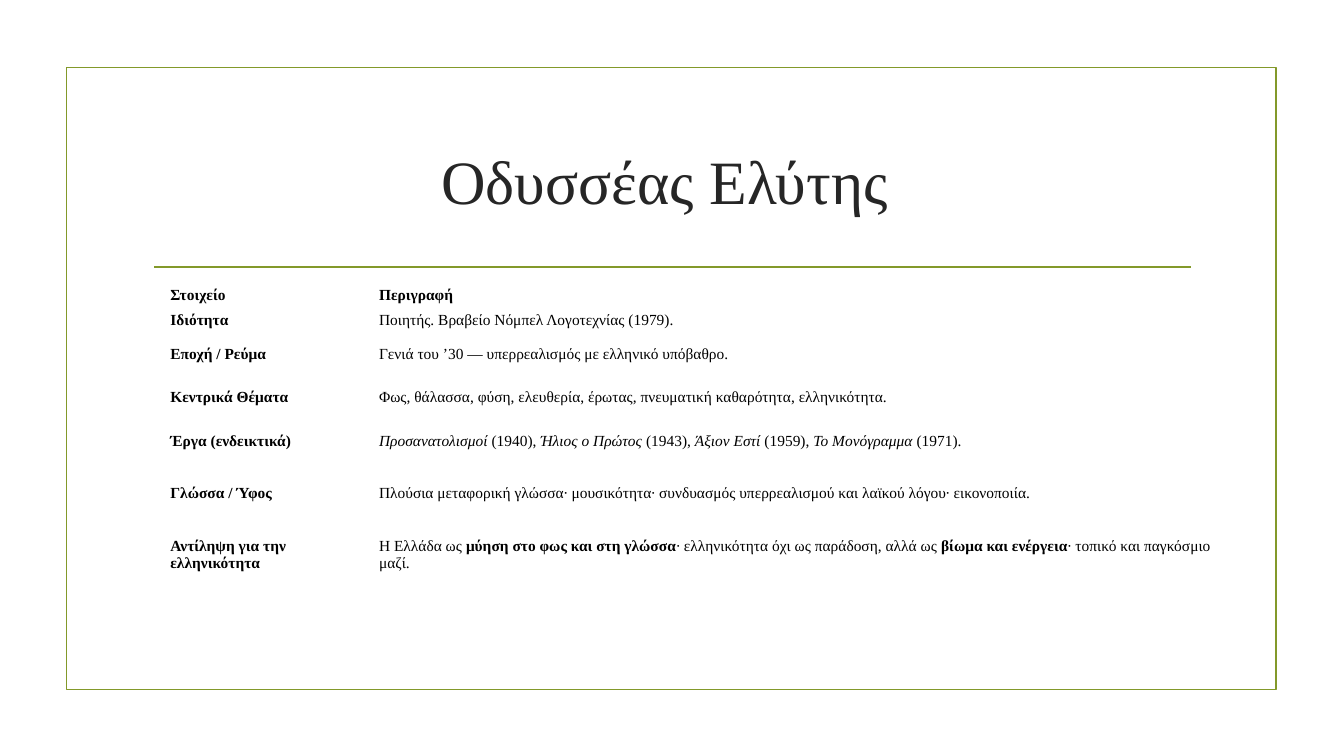
from lxml import etree
from pptx import Presentation
from pptx.dml.color import RGBColor
from pptx.enum.shapes import MSO_CONNECTOR, MSO_SHAPE
from pptx.enum.text import MSO_ANCHOR, PP_ALIGN
from pptx.oxml.ns import qn
from pptx.util import Inches, Pt

RECTANGLE = MSO_SHAPE.RECTANGLE
STRAIGHT = MSO_CONNECTOR.STRAIGHT
MIDDLE = MSO_ANCHOR.MIDDLE
CENTER = PP_ALIGN.CENTER
LEFT = PP_ALIGN.LEFT
TITLE_ONLY = 5

FONT = "Times New Roman"
COLORS = {"olive": "83992A", "title": "262626", "text": "000000"}
COLUMN_WIDTHS = [2.07, 8.43]
ROW_HEIGHTS = [0.25, 0.25, 0.43, 0.43, 0.43, 0.61, 0.61]

PLAIN, BOLD, ITALIC = {}, {"bold": True}, {"italic": True}
ROWS = [
    ("Στοιχείο", [("Περιγραφή", BOLD)]),
    ("Ιδιότητα", [("Ποιητής. Βραβείο Νόμπελ Λογοτεχνίας (1979).", PLAIN)]),
    ("Εποχή / Ρεύμα", [("Γενιά του ’30 — υπερρεαλισμός με ελληνικό υπόβαθρο.", PLAIN)]),
    ("Κεντρικά Θέματα", [
        ("Φως, θάλασσα, φύση, ελευθερία, έρωτας, πνευματική καθαρότητα, ελληνικότητα.", PLAIN),
    ]),
    ("Έργα (ενδεικτικά)", [
        ("Προσανατολισμοί", ITALIC), (" (1940), ", PLAIN),
        ("Ήλιος ο Πρώτος", ITALIC), (" (1943), ", PLAIN),
        ("Άξιον Εστί", ITALIC), (" (1959), ", PLAIN),
        ("Το Μονόγραμμα", ITALIC), (" (1971).", PLAIN),
    ]),
    ("Γλώσσα / Ύφος", [
        ("Πλούσια μεταφορική γλώσσα∙ μουσικότητα∙ συνδυασμός υπερρεαλισμού "
         "και λαϊκού λόγου∙ εικονοποιία.", PLAIN),
    ]),
    ("Αντίληψη για την ελληνικότητα", [
        ("Η Ελλάδα ως ", PLAIN),
        ("μύηση στο φως και στη γλώσσα", BOLD),
        ("∙ ελληνικότητα όχι ως παράδοση, αλλά ως ", PLAIN),
        ("βίωμα και ενέργεια", BOLD),
        ("∙ τοπικό και παγκόσμιο μαζί.", PLAIN),
    ]),
]


def add_span(para, text, size=11, color="text", bold=False, italic=False):
    span = para.add_run()
    span.text = text
    span.font.name = FONT
    span.font.size = Pt(size)
    span.font.bold = bold
    span.font.italic = italic
    span.font.color.rgb = RGBColor.from_string(COLORS[color])


def style_line(line):
    line.color.rgb = RGBColor.from_string(COLORS["olive"])
    line.width = Pt(1.25)


def add_frame(page):
    frame = page.shapes.add_shape(
        RECTANGLE, Inches(0.66), Inches(0.67), Inches(12), Inches(6.17))
    frame.shadow.inherit = False
    frame.fill.background()
    style_line(frame.line)


def add_rule(page):
    rule = page.shapes.add_connector(
        STRAIGHT, Inches(1.53), Inches(2.65), Inches(11.81), Inches(2.65))
    style_line(rule.line)
    etree.SubElement(rule._element.spPr, qn("a:effectLst"))


def set_title(page, text):
    title = page.shapes.title
    title.left, title.top = Inches(1.42), Inches(1.07)
    title.width, title.height = Inches(10.5), Inches(1.43)
    title.text_frame.vertical_anchor = MIDDLE
    para = title.text_frame.paragraphs[0]
    para.alignment = CENTER
    add_span(para, text, size=44, color="title")


def fill_cell(cell, spans):
    cell.fill.background()
    cell.vertical_anchor = MIDDLE
    cell.margin_left = cell.margin_right = Inches(0.06)
    cell.margin_top = cell.margin_bottom = Inches(0.03)
    para = cell.text_frame.paragraphs[0]
    para.alignment = LEFT
    for text, style in spans:
        add_span(para, text, **style)


def add_facts_table(page):
    table = page.shapes.add_table(
        len(ROWS), len(COLUMN_WIDTHS), Inches(1.63), Inches(2.8),
        Inches(sum(COLUMN_WIDTHS)), Inches(sum(ROW_HEIGHTS))).table
    table.first_row = False
    table.horz_banding = False
    for column, width in zip(table.columns, COLUMN_WIDTHS):
        column.width = Inches(width)
    for row, height, (label, description) in zip(table.rows, ROW_HEIGHTS, ROWS):
        row.height = Inches(height)
        fill_cell(row.cells[0], [(label, BOLD)])
        fill_cell(row.cells[1], description)


def main():
    deck = Presentation()
    deck.slide_width, deck.slide_height = Inches(13.33), Inches(7.5)
    page = deck.slides.add_slide(deck.slide_layouts[TITLE_ONLY])
    add_frame(page)
    add_rule(page)
    set_title(page, "Οδυσσέας Ελύτης ")
    add_facts_table(page)
    deck.save("out.pptx")


if __name__ == "__main__":
    main()
